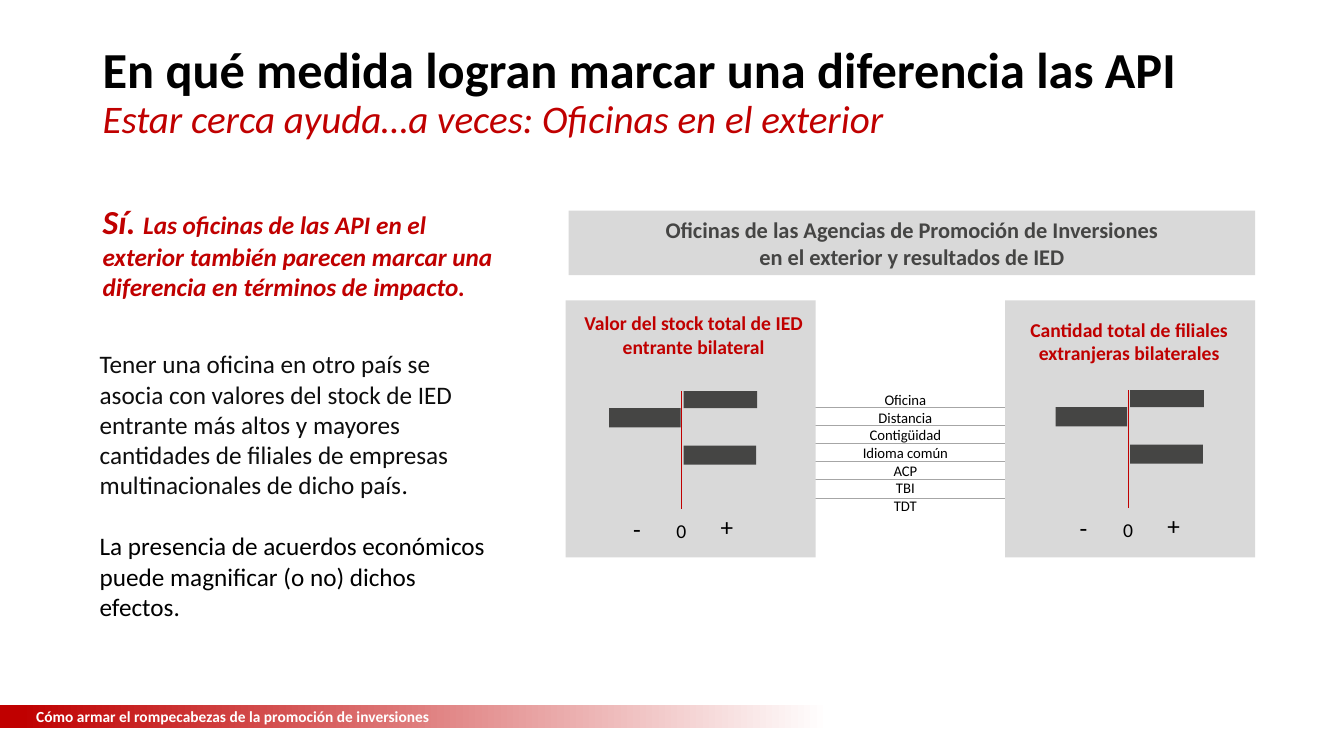
from dataclasses import dataclass

from lxml import etree
from pptx import Presentation
from pptx.dml.color import RGBColor
from pptx.enum.shapes import MSO_CONNECTOR, MSO_SHAPE
from pptx.enum.text import MSO_ANCHOR, PP_ALIGN
from pptx.oxml.ns import qn
from pptx.util import Pt

PX = 9144  # 100 px to the inch


@dataclass(frozen=True)
class Theme:
    font: str = "Calibri"
    red: str = "C00000"
    black: str = "000000"
    ink: str = "0D0D0D"
    dark: str = "454544"
    rule: str = "A6A6A6"
    panel: str = "D9D9D9"
    white: str = "FFFFFF"
    title: float = 36
    subtitle: float = 27.9
    lead: float = 24
    body: float = 18
    heading: float = 16
    label: float = 14
    footer: float = 11
    row: float = 10.5
    hairline: float = 0.5


T = Theme()


def rgb(color):
    return RGBColor.from_string(color)


def emu(*lengths):
    return [round(length * PX) for length in lengths]


def add_run(p, text, size, color, bold=False, italic=False):
    r = p.add_run()
    r.text = text
    f = r.font
    f.name, f.size, f.bold, f.italic = T.font, Pt(size), bold, italic
    f.color.rgb = rgb(color)


def write(tf, paragraphs, align=PP_ALIGN.LEFT, gap=0):
    """Fill a frame; each paragraph is a list of add_run argument tuples."""
    for i, runs in enumerate(paragraphs):
        p = tf.add_paragraph() if i else tf.paragraphs[0]
        p.alignment = align
        if i and gap:
            p.space_before = Pt(gap)
        for run in runs:
            add_run(p, *run)


def add_text(s, box, paragraphs, align=PP_ALIGN.LEFT, gap=0, wrap=True):
    tf = s.shapes.add_textbox(*emu(*box)).text_frame
    tf.word_wrap = wrap
    write(tf, paragraphs, align, gap)
    return tf


def add_rect(s, box, color):
    sp = s.shapes.add_shape(MSO_SHAPE.RECTANGLE, *emu(*box))
    sp.shadow.inherit = False
    sp.line.fill.background()
    sp.fill.solid()
    sp.fill.fore_color.rgb = rgb(color)
    return sp


def add_line(s, x1, y1, x2, y2, color):
    line = s.shapes.add_connector(MSO_CONNECTOR.STRAIGHT, *emu(x1, y1, x2, y2))
    line.line.color.rgb = rgb(color)
    line.line.width = Pt(T.hairline)
    etree.SubElement(line._element.spPr, qn("a:effectLst"))


def add_footer(s, x, y, w, h):
    band = add_rect(s, (x, y, w, h), T.red)
    band.fill.gradient()
    band.fill.gradient_angle = 180
    stops = ((0.18, T.white), (0.98, T.red))
    for stop, (position, color) in zip(band.fill.gradient_stops, stops):
        stop.position = position
        stop.color.rgb = rgb(color)
    add_text(s, (x + 26, y - 2, 662, 29), [[
        ("Cómo armar el rompecabezas de la promoción de inversiones", T.footer, T.white, True)]])


def add_title(s, box):
    tf = add_text(s, box, [[
        ("En qué medida logran marcar una diferencia las API", T.title, T.black, True)]])
    p = tf.paragraphs[0]
    p.line_spacing = 0.9
    p.add_line_break()
    add_run(p, "Estar cerca ayuda…a veces: Oficinas en el exterior", T.subtitle, T.red, False, True)


def add_message(s, x, y):
    add_text(s, (x + 3, y, 418, 138), [[
        ("Sí. ", T.lead, T.red, True, True),
        ("Las oficinas de las API en el exterior también parecen marcar una "
         "diferencia en términos de impacto.", T.body, T.red, True, True)]])
    add_text(s, (x, y + 147, 411, 283), [
        [("Tener una oficina en otro país se asocia con valores del stock de IED "
          "entrante más altos y mayores cantidades de filiales de empresas "
          "multinacionales de dicho país", T.body, T.ink), (".", T.body, T.black)],
        [("La presencia de acuerdos económicos puede magnificar (o no) dichos efectos.",
          T.body, T.black)]], gap=22)


def add_effects(s, x, y):
    """Sign bars around a zero axis whose top is at x, y."""
    for dx, dy, w, h in ((2, 0, 73, 17), (-72, 17, 71, 19), (2, 54, 72, 19)):
        add_rect(s, (x + dx, y + dy, w, h), T.dark)
    add_line(s, x, y + 117, x, y, T.red)
    signs = (("-", T.body, -58, 116, 28, 40),
             ("0", T.label, -15, 122, 30, 34),
             ("+", T.body, 29, 114, 33, 40))
    for text, size, dx, dy, w, h in signs:
        add_text(s, (x + dx, y + dy, w, h), [[(text, size, T.black)]], wrap=False)


def add_panel(s, x, y, title, title_box, axis):
    """One outcome panel; title_box and axis are offsets from its corner."""
    add_rect(s, (x, y, 248, 255), T.panel)
    dx, dy, w, h = title_box
    add_text(s, (x + dx, y + dy, w, h), [[(title, T.label, T.red, True)]], PP_ALIGN.CENTER)
    add_effects(s, x + axis[0], y + axis[1])


def add_factors(s, x, y):
    """Row names between the panels, with the rules that separate them."""
    for i in range(6):
        rule_y = y + 21 + 18 * i
        add_line(s, x - 146, rule_y, x + 445, rule_y, T.rule)
    names = ("Oficina", "Distancia", "Contigüidad", "Idioma común", "ACP", "TBI", "TDT")
    add_text(s, (x, y, 304, 160), [[(name, T.row, T.black)] for name in names], PP_ALIGN.CENTER)


def add_results(s, x, y):
    add_factors(s, x + 185, y + 174)
    panels = ((0, "Valor del stock total de IED entrante bilateral",
               (3, 6, 248, 57), (115, 90)),
              (436, "Cantidad total de filiales extranjeras bilaterales",
               (-14, 12, 274, 57), (122, 89)))
    for dx, *panel in panels:
        add_panel(s, x + dx, y + 89, *panel)
    tf = add_rect(s, (x + 3, y, 681, 64), T.panel).text_frame
    tf.word_wrap = True
    tf.vertical_anchor = MSO_ANCHOR.MIDDLE
    lines = ("Oficinas de las Agencias de Promoción de Inversiones",
             "en el exterior y resultados de IED")
    write(tf, [[(line, T.heading, T.dark, True)] for line in lines], PP_ALIGN.CENTER)


def main():
    prs = Presentation()
    prs.slide_width, prs.slide_height = emu(1333, 750)
    s = prs.slides.add_slide(prs.slide_layouts[6])
    add_footer(s, 0, 699, 1003, 23)
    add_title(s, (92, 40, 1170, 87))
    add_message(s, 89, 194)
    add_results(s, 561, 209)
    prs.save("out.pptx")


if __name__ == "__main__":
    main()
